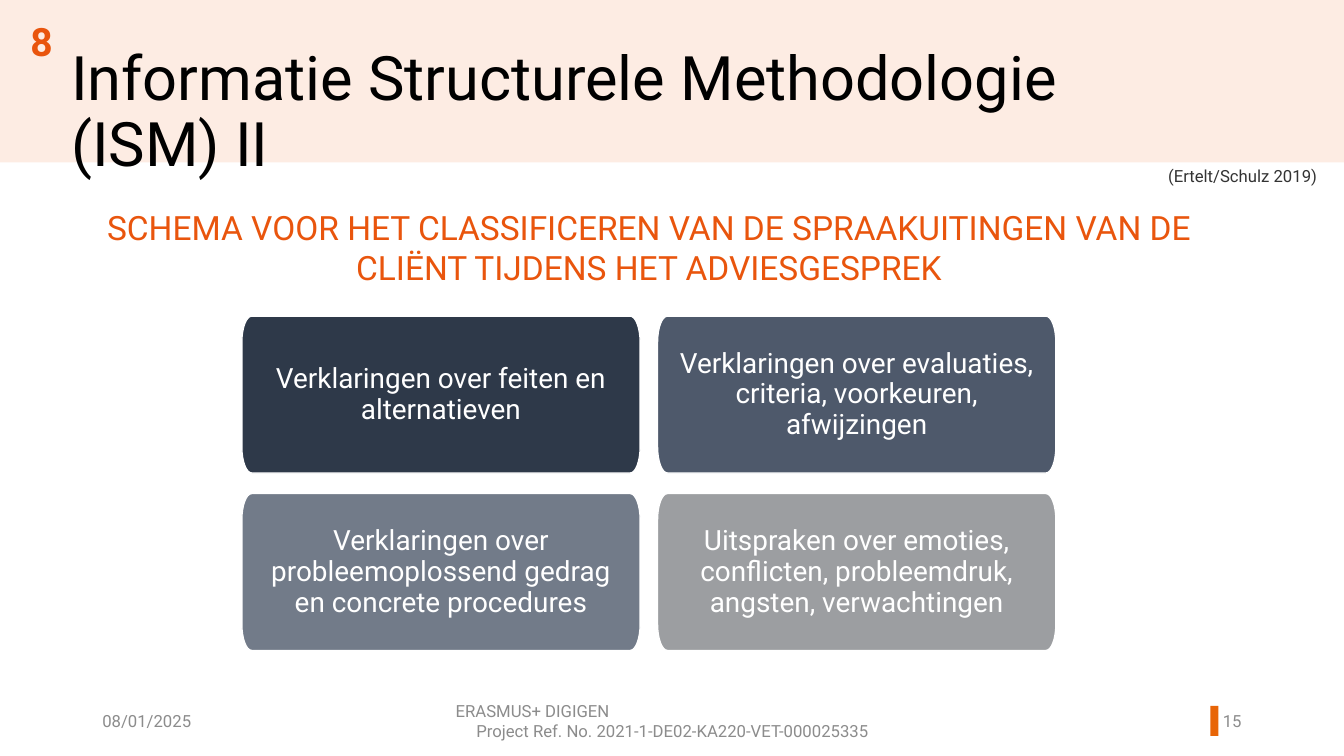
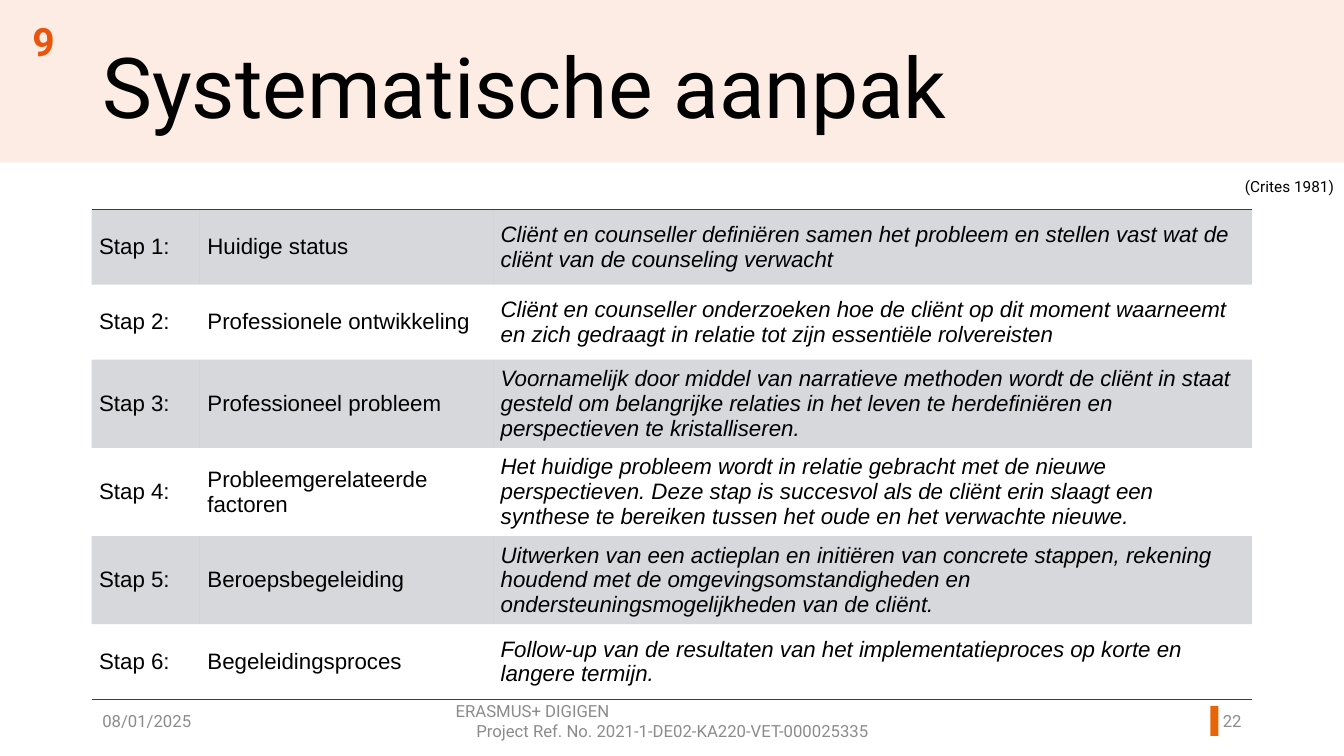
from itertools import cycle

from lxml.etree import SubElement
from pptx import Presentation
from pptx.dml.color import RGBColor
from pptx.enum.shapes import MSO_SHAPE
from pptx.enum.text import MSO_ANCHOR, PP_ALIGN
from pptx.oxml import parse_xml
from pptx.oxml.ns import nsdecls, qn
from pptx.util import Cm, Pt

COLOURS = {
    "band": "FDECE3", "marker": "E86507", "accent": "E9550D",
    "footer": "8C8C8C", "black": "000000", "source": "333333",
    "white": "FFFFFF", "slate": "333F50",
    "facts": "2E3949", "values": "4E596B", "actions": "727B89",
    "emotions": "9C9EA1",
}
WIDTH, HEIGHT = 34.01, 19.13
FOOTER_TOP, FOOTER_HEIGHT = 17.73, 1.02
PLAIN_TABLE_STYLE = "{2D5ABB26-0587-4C30-8999-92F81FD0307C}"
LEFT, CENTER, RIGHT = PP_ALIGN.LEFT, PP_ALIGN.CENTER, PP_ALIGN.RIGHT

STATEMENTS = [
    ("facts", "Verklaringen over feiten en alternatieven"),
    ("values", "Verklaringen over evaluaties, criteria, voorkeuren, afwijzingen"),
    ("actions", "Verklaringen over probleemoplossend gedrag en concrete procedures"),
    ("emotions", "Uitspraken over emoties, conflicten, probleemdruk, angsten, "
                 "verwachtingen"),
]
STEPS = [
    ("Huidige status",
     "Cliënt en counseller definiëren samen het probleem en stellen vast wat de "
     "cliënt van de counseling verwacht"),
    ("Professionele ontwikkeling",
     "Cliënt en counseller onderzoeken hoe de cliënt op dit moment waarneemt en "
     "zich gedraagt in relatie tot zijn essentiële rolvereisten"),
    ("Professioneel probleem",
     "Voornamelijk door middel van narratieve methoden wordt de cliënt in staat "
     "gesteld om belangrijke relaties in het leven te herdefiniëren en "
     "perspectieven te kristalliseren."),
    ("Probleemgerelateerde factoren",
     "Het huidige probleem wordt in relatie gebracht met de nieuwe perspectieven. "
     "Deze stap is succesvol als de cliënt erin slaagt een synthese te bereiken "
     "tussen het oude en het verwachte nieuwe."),
    ("Beroepsbegeleiding",
     "Uitwerken van een actieplan en initiëren van concrete stappen, rekening "
     "houdend met de omgevingsomstandigheden en ondersteuningsmogelijkheden van "
     "de cliënt."),
    ("Begeleidingsproces",
     "Follow-up van de resultaten van het implementatieproces op korte en langere "
     "termijn."),
]


def rgb(name):
    return RGBColor.from_string(COLOURS[name])


def write(frame, text, size=12, colour="black", font="Roboto", bold=False,
          italic=False, aligns=(LEFT,), spacing=None):
    """Fill a text frame with one paragraph per line; aligns repeat over them."""
    frame.word_wrap = True
    for index, (line, align) in enumerate(zip(text.split("\n"), cycle(aligns))):
        para = frame.add_paragraph() if index else frame.paragraphs[0]
        para.alignment = align
        para.line_spacing = spacing
        span = para.add_run()
        span.text = line
        span.font.name = font
        span.font.size = Pt(size)
        span.font.bold = bold
        span.font.italic = italic
        span.font.color.rgb = rgb(colour)


def add_text(page, area, text, anchor=MSO_ANCHOR.TOP, **style):
    box = page.shapes.add_textbox(*map(Cm, area))
    box.text_frame.vertical_anchor = anchor
    write(box.text_frame, text, **style)


def add_bar(page, area, colour):
    bar = page.shapes.add_shape(MSO_SHAPE.RECTANGLE, *map(Cm, area))
    bar.shadow.inherit = False
    bar.fill.solid()
    bar.fill.fore_color.rgb = rgb(colour)
    bar.line.fill.background()


def add_page(deck, section, section_area, title, title_area, title_size, number):
    """Add a slide with band, title, section number and footer."""
    page = deck.slides.add_slide(deck.slide_layouts[6])
    add_bar(page, (0, 0, WIDTH, 4.11), "band")
    add_bar(page, (30.63, 17.86, 0.2, 0.76), "marker")
    footers = [
        (2.34, 7.65, "08/01/2025", (LEFT,)),
        (11.28, 11.48,
         "ERASMUS+ DIGIGEN\nProject Ref. No. 2021-1-DE02-KA220-VET-000025335",
         (LEFT, CENTER)),
        (30.02, 1.65, number, (RIGHT,)),
    ]
    for left, width, text, aligns in footers:
        add_text(page, (left, FOOTER_TOP, width, FOOTER_HEIGHT), text,
                 colour="footer", aligns=aligns, anchor=MSO_ANCHOR.MIDDLE)
    add_text(page, title_area, title, size=title_size, spacing=0.9)
    add_text(page, section_area, section, size=28, colour="accent", bold=True,
             aligns=(CENTER,))
    return page


def round_corners(card):
    """Turn every other straight edge, starting with the first, into a curve."""
    width, height = card.width, card.height
    corners = [(0, 0), (width, 0), (width, height), (0, height)]
    nodes = list(card._element.find(".//" + qn("a:path")))
    for start, end, corner in zip(nodes[0:8:2], nodes[1:8:2], corners):
        ends = [[int(node[-1].get(axis)) for axis in "xy"] for node in (start, end)]
        controls = [[round(value + 0.55 * (goal - value))
                     for value, goal in zip(point, corner)] for point in ends]
        end.tag = qn("a:cubicBezTo")
        for position, (x, y) in enumerate(controls):
            control = end.makeelement(qn("a:pt"), {"x": str(x), "y": str(y)})
            end.insert(position, control)


def add_card(page, left, top, width, height, colour, text):
    """Draw a box whose corners are taller than they are wide."""
    radius_x, radius_y = 0.25, 0.66
    right, bottom = left + width, top + height
    points = [(left, top + radius_y), (left + radius_x, top),
              (right - radius_x, top), (right, top + radius_y),
              (right, bottom - radius_y), (right - radius_x, bottom),
              (left + radius_x, bottom), (left, bottom - radius_y)]
    points = [(Cm(x), Cm(y)) for x, y in points]
    outline = page.shapes.build_freeform(*points[0])
    outline.add_line_segments(points[1:], close=True)
    card = outline.convert_to_shape()
    round_corners(card)
    card.shadow.inherit = False
    card.fill.solid()
    card.fill.fore_color.rgb = rgb(colour)
    card.line.color.rgb = rgb("white")
    card.line.width = Pt(1)
    frame = card.text_frame
    frame.vertical_anchor = MSO_ANCHOR.MIDDLE
    frame.margin_left = frame.margin_right = Cm(0.45)
    frame.margin_top = frame.margin_bottom = Cm(0.28)
    write(frame, text, size=20, colour="white", aligns=(CENTER,), spacing=0.92)


def shade(cell):
    """Tint a cell with a 20 % opaque slate."""
    cell.fill.solid()
    cell.fill.fore_color.rgb = rgb("slate")
    tint = cell._tc.tcPr.find(".//" + qn("a:srgbClr"))
    SubElement(tint, qn("a:alpha"), val="20000")


def add_border(cell, side):
    border = parse_xml(
        f'<a:{side} {nsdecls("a")} w="12700"><a:solidFill>'
        f'<a:srgbClr val="{COLOURS["slate"]}"/></a:solidFill></a:{side}>')
    cell._tc.get_or_add_tcPr().insert(0, border)


def add_steps(page):
    widths, row_height = (2.74, 7.42, 19.2), 1.9
    table = page.shapes.add_table(
        len(STEPS), len(widths), Cm(2.32), Cm(5.3), Cm(sum(widths)),
        Cm(row_height * len(STEPS))).table
    table.first_row = table.horz_banding = False
    table._tbl.tblPr.find(qn("a:tableStyleId")).text = PLAIN_TABLE_STYLE
    for column, width in zip(table.columns, widths):
        column.width = Cm(width)
    for index, (name, description) in enumerate(STEPS):
        table.rows[index].height = Cm(row_height)
        texts = (f"Stap {index + 1}:", name, description)
        for cell, text in zip(table.rows[index].cells, texts):
            cell.vertical_anchor = MSO_ANCHOR.MIDDLE
            cell.margin_left = cell.margin_right = Cm(0.19)
            cell.margin_top = cell.margin_bottom = Cm(0.1)
            write(cell.text_frame, text, size=16, font="Arial",
                  italic=text == description)
            if index % 2:
                cell.fill.background()
            else:
                shade(cell)
            if index == 0:
                add_border(cell, "lnT")
            elif index == len(STEPS) - 1:
                add_border(cell, "lnB")


def add_methodology_page(deck):
    page = add_page(deck, "8", (0, 0.32, 2.11, 1.45),
                    "Informatie Structurele Methodologie (ISM) II",
                    (1.55, 1.07, 29.51, 2.18), 44, "15")
    for index, (colour, text) in enumerate(STATEMENTS):
        row, column = divmod(index, 2)
        add_card(page, 6.12 + 10.52 * column, 8 + 4.49 * row, 10.08, 3.97,
                 colour, text)
    add_text(page, (1.97, 5.11, 28.91, 2.31),
             "SCHEMA VOOR HET CLASSIFICEREN VAN DE SPRAAKUITINGEN VAN DE CLIËNT "
             "TIJDENS HET ADVIESGESPREK",
             size=24, colour="accent", aligns=(CENTER,))
    add_text(page, (29.31, 4.07, 4.7, 0.76), "(Ertelt/Schulz 2019)",
             colour="source")


def add_approach_page(deck):
    page = add_page(deck, "9", (0.23, 0.32, 1.75, 1.45), "Systematische aanpak",
                    (2.34, 1.04, 25.35, 2.18), 60.3, "22")
    add_steps(page)
    add_text(page, (26.09, 4.35, 7.92, 0.74), "(Crites 1981)", size=11,
             aligns=(RIGHT,))


def main():
    deck = Presentation()
    deck.slide_width, deck.slide_height = Cm(WIDTH), Cm(HEIGHT)
    add_methodology_page(deck)
    add_approach_page(deck)
    deck.save("out.pptx")


if __name__ == "__main__":
    main()
